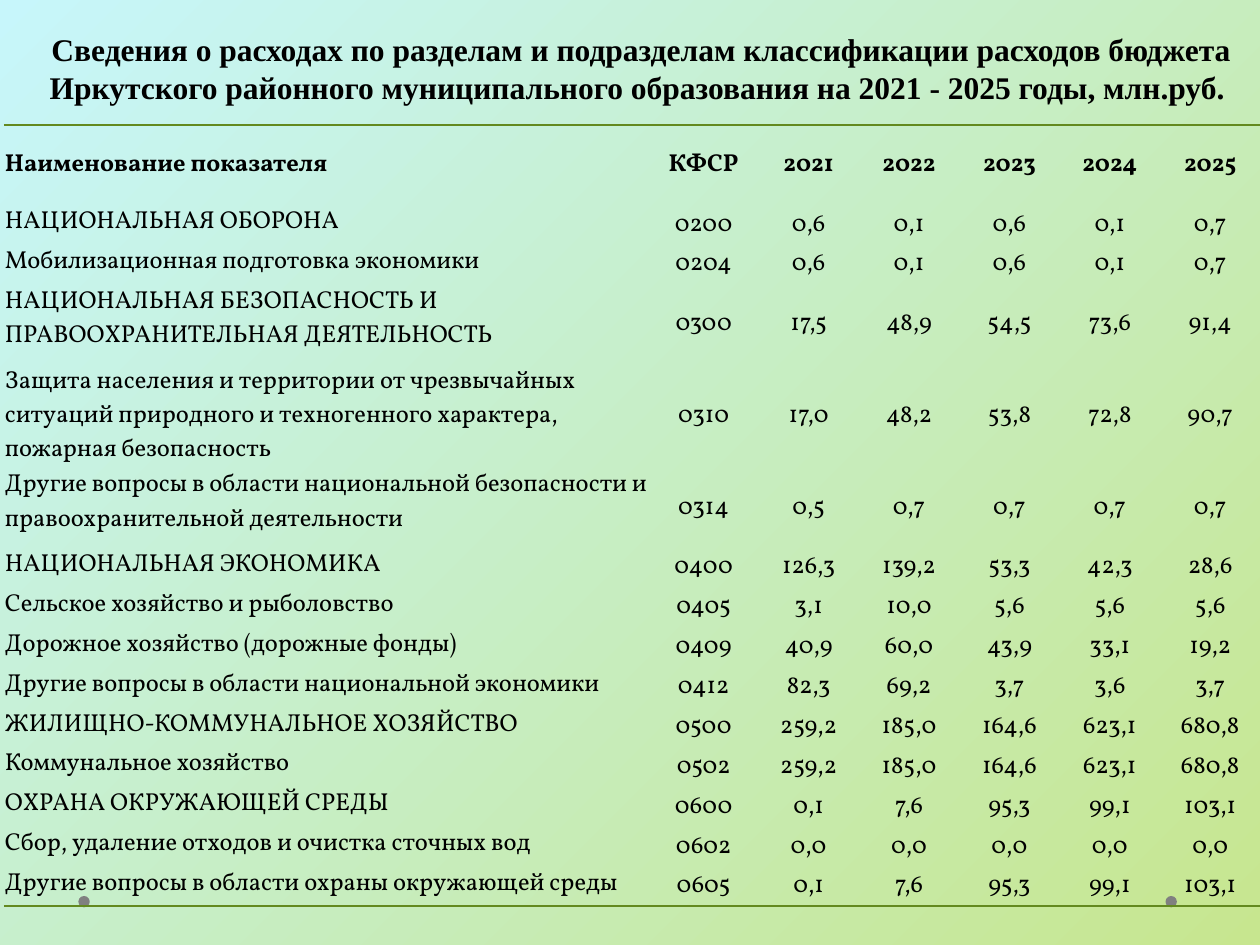
from typing import NamedTuple

from lxml.etree import SubElement
from pptx import Presentation
from pptx.dml.color import RGBColor
from pptx.enum.shapes import MSO_SHAPE
from pptx.enum.text import MSO_ANCHOR, PP_ALIGN
from pptx.oxml.ns import qn
from pptx.util import Pt

BLACK = RGBColor(0x00, 0x00, 0x00)
GRAY = RGBColor(0x80, 0x80, 0x80)
GREEN = RGBColor(0x63, 0x89, 0x1F)
LIGHT_CYAN = RGBColor(0xC7, 0xF6, 0xFB)
LIGHT_LIME = RGBColor(0xC7, 0xE6, 0x8F)

TITLE = (
    "Сведения о расходах по разделам и подразделам классификации расходов бюджета "
    "Иркутского районного муниципального образования на 2021 - 2025 годы, млн.руб. "
)
NO_STYLE_NO_GRID = "{2D5ABB26-0587-4C30-8999-92F81FD0307C}"
COLUMN_WIDTHS = [368.6, 62.6] + [57.4] * 5
LINE_HEIGHT = 22.8
DOUBLE_HEIGHT = 45.5


class BudgetRow(NamedTuple):
    name: str
    values: str
    height: float = LINE_HEIGHT


ROWS = [
    BudgetRow("Наименование показателя", "КФСР 2021 2022 2023 2024 2025", DOUBLE_HEIGHT),
    BudgetRow("НАЦИОНАЛЬНАЯ ОБОРОНА", "0200 0,6 0,1 0,6 0,1 0,7"),
    BudgetRow("Мобилизационная подготовка экономики", "0204 0,6 0,1 0,6 0,1 0,7"),
    BudgetRow("НАЦИОНАЛЬНАЯ БЕЗОПАСНОСТЬ И ПРАВООХРАНИТЕЛЬНАЯ ДЕЯТЕЛЬНОСТЬ",
              "0300 17,5 48,9 54,5 73,6 91,4", DOUBLE_HEIGHT),
    BudgetRow("Защита населения и территории от чрезвычайных ситуаций природного "
              "и техногенного характера, пожарная безопасность",
              "0310 17,0 48,2 53,8 72,8 90,7", 49.5),
    BudgetRow("Другие вопросы в области национальной безопасности и "
              "правоохранительной деятельности",
              "0314 0,5 0,7 0,7 0,7 0,7", DOUBLE_HEIGHT),
    BudgetRow("НАЦИОНАЛЬНАЯ ЭКОНОМИКА", "0400 126,3 139,2 53,3 42,3 28,6"),
    BudgetRow("Сельское хозяйство и рыболовство", "0405 3,1 10,0 5,6 5,6 5,6"),
    BudgetRow("Дорожное хозяйство (дорожные фонды)", "0409 40,9 60,0 43,9 33,1 19,2"),
    BudgetRow("Другие вопросы в области национальной экономики",
              "0412 82,3 69,2 3,7 3,6 3,7"),
    BudgetRow("ЖИЛИЩНО-КОММУНАЛЬНОЕ ХОЗЯЙСТВО", "0500 259,2 185,0 164,6 623,1 680,8"),
    BudgetRow("Коммунальное хозяйство", "0502 259,2 185,0 164,6 623,1 680,8"),
    BudgetRow("ОХРАНА ОКРУЖАЮЩЕЙ СРЕДЫ", "0600 0,1 7,6 95,3 99,1 103,1"),
    BudgetRow("Сбор, удаление отходов и очистка сточных вод", "0602 0,0 0,0 0,0 0,0 0,0"),
    BudgetRow("Другие вопросы в области охраны окружающей среды",
              "0605 0,1 7,6 95,3 99,1 103,1"),
]


def write_text(text_frame, text: str, *, font: str = "Vollkorn", size: float = 14,
               bold: bool = False, align=PP_ALIGN.LEFT) -> None:
    paragraph = text_frame.paragraphs[0]
    paragraph.alignment = align
    run = paragraph.add_run()
    run.text = text
    run.font.name = font
    run.font.size = Pt(size)
    run.font.bold = bold
    run.font.color.rgb = BLACK


def add_border(cell, side: str) -> None:
    """Draw a green rule on one side of the cell, "a:lnT" or "a:lnB"."""
    properties = cell._tc.get_or_add_tcPr()
    line = properties.makeelement(qn(side), {"w": str(Pt(1))})
    properties.insert(0, line)
    fill = SubElement(line, qn("a:solidFill"))
    SubElement(fill, qn("a:srgbClr"), val=str(GREEN))


def fill_background(slide) -> None:
    fill = slide.background.fill
    fill.gradient()
    fill.gradient_angle = 315
    for stop, color in zip(fill.gradient_stops, (LIGHT_CYAN, LIGHT_LIME)):
        stop.color.rgb = color


def add_dot(slide, left: float) -> None:
    dot = slide.shapes.add_shape(MSO_SHAPE.OVAL, Pt(left), Pt(512), Pt(6.5), Pt(6.5))
    dot.shadow.inherit = False
    dot.fill.solid()
    dot.fill.fore_color.rgb = GRAY
    dot.line.fill.background()


def add_title(slide) -> None:
    title = slide.shapes.title
    title.left, title.top, title.width, title.height = Pt(10.8), Pt(9.4), Pt(711.4), Pt(54.7)
    title.text_frame.word_wrap = True
    title.text_frame.vertical_anchor = MSO_ANCHOR.BOTTOM
    write_text(title.text_frame, TITLE, font="Times New Roman", size=18, bold=True,
               align=PP_ALIGN.CENTER)


def add_budget_table(slide) -> None:
    frame = slide.shapes.add_table(
        len(ROWS), len(COLUMN_WIDTHS), Pt(2.2), Pt(71.3),
        Pt(sum(COLUMN_WIDTHS)), Pt(sum(row.height for row in ROWS)))
    table = frame.table
    table.first_row = table.horz_banding = False
    table._tbl.tblPr.find(qn("a:tableStyleId")).text = NO_STYLE_NO_GRID
    for column, width in zip(table.columns, COLUMN_WIDTHS):
        column.width = Pt(width)
    last = len(ROWS) - 1
    for row_index, row in enumerate(ROWS):
        table.rows[row_index].height = Pt(row.height)
        for column_index, text in enumerate([row.name, *row.values.split()]):
            cell = table.cell(row_index, column_index)
            is_header, is_name = row_index == 0, column_index == 0
            cell.margin_left = cell.margin_right = cell.margin_top = Pt(0.6)
            cell.margin_bottom = 0
            cell.vertical_anchor = (
                MSO_ANCHOR.TOP if is_name and not is_header else MSO_ANCHOR.MIDDLE)
            cell.fill.background()
            write_text(cell.text_frame, text, bold=is_header,
                       align=PP_ALIGN.LEFT if is_name else PP_ALIGN.CENTER)
            if is_header:
                add_border(cell, "a:lnT")
            elif row_index == last:
                add_border(cell, "a:lnB")


def main() -> None:
    presentation = Presentation()
    presentation.slide_width, presentation.slide_height = Pt(720), Pt(540)
    slide = presentation.slides.add_slide(presentation.slide_layouts[5])
    fill_background(slide)
    for left in (666, 44.8):
        add_dot(slide, left)
    add_title(slide)
    add_budget_table(slide)
    presentation.save("out.pptx")


if __name__ == "__main__":
    main()
